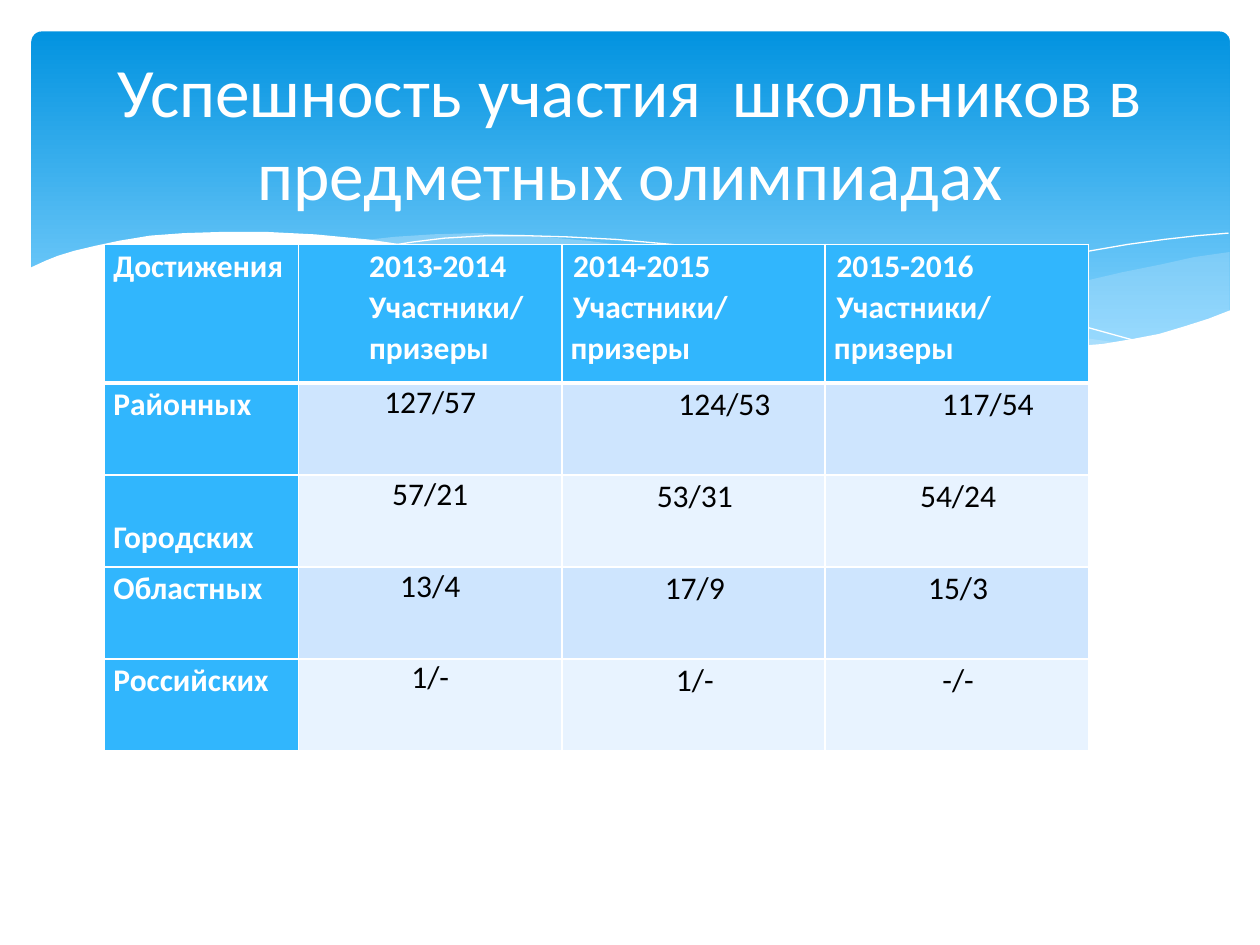
"""Slide with a wave banner and a table of school olympiad results."""
import pptx
import pptx.util
import pptx.dml.color
import pptx.enum.shapes
import pptx.enum.text
import pptx.oxml
import pptx.oxml.ns
import lxml.etree

PX = 9144
FONT = "Calibri"
COLORS = {"white": "FFFFFF", "black": "000000", "top": "0293E0", "bottom": "83D3FE",
          "wave": "C6E7FC", "head": "31B6FD", "band": "CEE5FE", "light": "E8F3FF"}
TITLE = "Успешность участия  школьников в предметных олимпиадах"
HEADER = [
    (["Достижения"], 0),
    (["2013-2014", "Участники/", "призеры"], 49),
    (["2014-2015", "Участники/ призеры"], 2),
    (["2015-2016", "Участники/ призеры"], 2),
]
RESULTS = [
    ("Районных", 0, ["127/57", "124/53", "117/54"], 49),
    (" Городских", 49, ["57/21", "53/31", "54/24"], 2),
    ("Областных", 0, ["13/4", "17/9", "15/3"], 2),
    ("Российских", 0, ["1/-", "1/-", "-/-"], 2),
]
COLS = [154, 209, 209, 209]
ROWS = [110, 73, 73, 73, 73]

RIGHT_WAVE = [
    (976, 200), (948, 204), (921, 210), (891, 216), (861, 223), (805, 237), (753, 248),
    (706, 257), (661, 265), (691, 269), (719, 271), (745, 275), (769, 277), (803, 278),
    (835, 277), (863, 275), (889, 272), (913, 267), (935, 262), (949, 257), (976, 247)]
MIDDLE_WAVE = [
    (893, 273), (866, 269), (837, 265), (807, 260), (775, 254), (741, 247), (706, 240),
    (668, 231), (629, 222), (598, 214), (569, 208), (541, 203), (514, 198), (489, 194),
    (465, 191), (442, 189), (420, 187), (380, 185), (344, 186), (313, 188), (286, 191),
    (323, 196), (362, 203), (404, 211), (449, 222), (530, 240), (601, 255), (650, 264),
    (695, 270), (736, 275), (773, 277), (807, 278), (848, 277), (876, 275)]
LONG_LINE = [
    (309, 195), (328, 192), (353, 189), (387, 187), (416, 187), (450, 188), (489, 190),
    (533, 194), (582, 200), (636, 208), (695, 219), (760, 233), (831, 251), (907, 272)]
SHORT_LINE = [
    (613, 257), (653, 246), (695, 235), (748, 223), (806, 210), (866, 199), (895, 194),
    (924, 190), (951, 187), (975, 185)]
WHITE_WAVE = [
    (977, 246), (959, 253), (940, 259), (920, 265), (899, 269), (875, 273), (850, 275),
    (823, 277), (793, 276), (761, 275), (726, 272), (688, 268), (648, 262), (603, 254),
    (555, 245), (503, 233), (447, 220), (391, 207), (340, 197), (292, 190), (250, 186),
    (211, 184), (177, 184), (146, 185), (119, 187), (95, 191), (76, 195), (59, 199),
    (46, 203), (36, 207), (23, 213), (23, 329), (977, 329)]
CURVES = [
    (RIGHT_WAVE, "wave", 29, True), (MIDDLE_WAVE, "wave", 40, True),
    (LONG_LINE, "white", 100, False), (SHORT_LINE, "white", 100, False),
    (WHITE_WAVE, "white", 100, True)]


def rgb(name):
    return pptx.dml.color.RGBColor.from_string(COLORS[name])


def box(*sizes):
    return [v * PX for v in sizes]


def add_banner(s):
    kind = pptx.enum.shapes.MSO_SHAPE.ROUNDED_RECTANGLE
    sp = s.shapes.add_shape(kind, *box(25, 25, 951, 270))
    sp.adjustments[0] = 0.03
    sp.shadow.inherit = False
    sp.line.fill.background()
    sp.fill.gradient()
    sp.fill.gradient_angle = 270
    for stop, name, pos in zip(sp.fill.gradient_stops, ("top", "bottom"), (0, 0.9)):
        stop.color.rgb = rgb(name)
        stop.position = pos


def add_curve(s, points, color, alpha, closed):
    fb = s.shapes.build_freeform(*points[0], scale=PX)
    fb.add_line_segments(points[1:], close=closed)
    sp = fb.convert_to_shape()
    sp.shadow.inherit = False
    if not closed:
        sp.fill.background()
        sp.line.color.rgb = rgb(color)
        sp.line.width = 0
        return
    sp.line.fill.background()
    sp.fill.solid()
    sp.fill.fore_color.rgb = rgb(color)
    if alpha < 100:
        clr = sp._element.spPr.find(".//" + pptx.oxml.ns.qn("a:srgbClr"))
        lxml.etree.SubElement(clr, pptx.oxml.ns.qn("a:alpha")).set("val", str(alpha * 1000))


def add_run(p, text, size, color, bold=False):
    r = p.add_run()
    r.text = text
    r.font.name = FONT
    r.font.size = pptx.util.Pt(size)
    r.font.bold = bold
    r.font.color.rgb = rgb(color)


def set_borders(cell, widths):
    for i, (side, width) in enumerate(zip("LRTB", widths)):
        ln = pptx.oxml.parse_xml(
            f'<a:ln{side} {pptx.oxml.ns.nsdecls("a")} w="{width * 12700}"><a:solidFill>'
            f'<a:srgbClr val="{COLORS["white"]}"/></a:solidFill></a:ln{side}>')
        cell._tc.get_or_add_tcPr().insert(i, ln)


def fill_cell(cell, lines, fill, align, indent=0, spacing=1.07, after=0):
    cell.margin_left = cell.margin_right = 7 * PX
    cell.margin_top = cell.margin_bottom = 0
    cell.fill.solid()
    cell.fill.fore_color.rgb = rgb(fill)
    tf = cell.text_frame
    head = fill == "head"
    for i, line in enumerate(lines):
        p = tf.add_paragraph() if i else tf.paragraphs[0]
        p.alignment = align
        p.line_spacing = spacing
        p.space_after = pptx.util.Pt(after)
        p._p.get_or_add_pPr().set("indent", str(indent * PX))
        add_run(p, line, 18, "white" if head else "black", head)


def add_results(s):
    al = pptx.enum.text.PP_ALIGN
    frame = s.shapes.add_table(len(ROWS), len(COLS), *box(83, 194, sum(COLS), sum(ROWS)))
    table = frame.table
    table.horz_banding = False
    for col, width in zip(table.columns, COLS):
        col.width = width * PX
    for row, height in zip(table.rows, ROWS):
        row.height = height * PX
    for c, (lines, indent) in enumerate(HEADER):
        fill_cell(table.cell(0, c), lines, "head", al.JUSTIFY, indent)
    for r, (name, name_indent, values, indent) in enumerate(RESULTS, 1):
        fill_cell(table.cell(r, 0), [name], "head", al.JUSTIFY, name_indent, after=8)
        fill = "band" if r % 2 else "light"
        fill_cell(table.cell(r, 1), values[:1], fill, al.CENTER, spacing=1.0)
        for c, value in enumerate(values[1:], 2):
            fill_cell(table.cell(r, c), [value], fill, al.CENTER, indent, after=8)
    for r in range(len(ROWS)):
        for c in range(len(COLS)):
            set_borders(table.cell(r, c), (1, 1, 3 if r == 1 else 1, 3 if r == 0 else 1))


def add_title(s):
    tf = s.shapes.add_textbox(*box(50, 37, 900, 134)).text_frame
    tf.word_wrap = True
    tf.margin_top = tf.margin_bottom = 0
    tf.vertical_anchor = pptx.enum.text.MSO_ANCHOR.MIDDLE
    p = tf.paragraphs[0]
    p.alignment = pptx.enum.text.PP_ALIGN.CENTER
    add_run(p, TITLE, 39.6, "white")


def main():
    prs = pptx.Presentation()
    prs.slide_width, prs.slide_height = box(1000, 750)
    s = prs.slides.add_slide(prs.slide_layouts[6])
    add_banner(s)
    for curve in CURVES:
        add_curve(s, *curve)
    add_results(s)
    add_title(s)
    prs.save("out.pptx")


if __name__ == "__main__":
    main()
